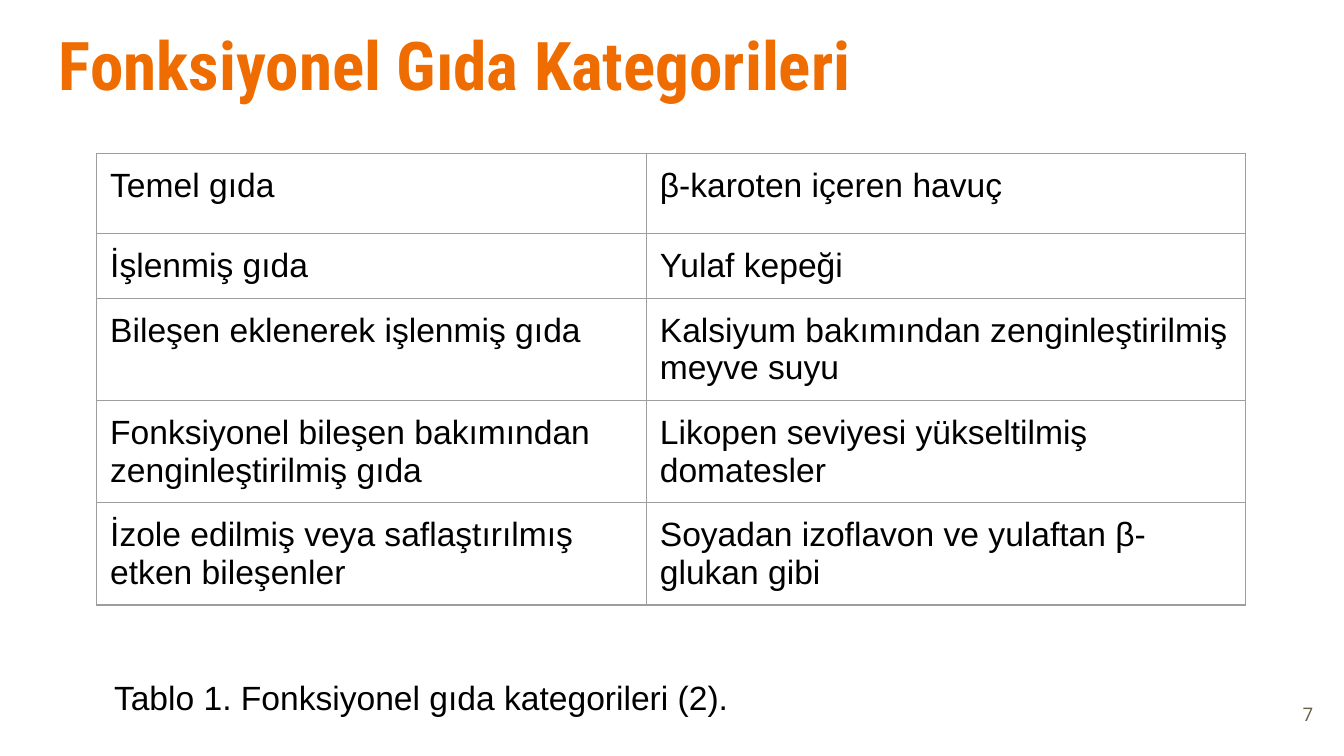
from dataclasses import dataclass

from lxml import etree
from pptx import Presentation
from pptx.dml.color import RGBColor
from pptx.enum.text import MSO_ANCHOR, PP_ALIGN
from pptx.oxml.ns import qn
from pptx.util import Inches, Pt

LEFT, RIGHT = PP_ALIGN.LEFT, PP_ALIGN.RIGHT
TOP, MIDDLE = MSO_ANCHOR.TOP, MSO_ANCHOR.MIDDLE
PAD = Inches(0.1)
EDGE = "9E9E9E"
WIDE = Inches(10)
HIGH = WIDE * 9 // 16


@dataclass
class Style:
    size: float
    font: str
    color: str
    bold: bool = False


@dataclass
class Label:
    text: str
    box: tuple
    style: Style
    align: int = LEFT
    anchor: int = TOP


BODY = Style(18, "Arial", "000000")
LABELS = [
    Label("Fonksiyonel Gıda Kategorileri", (0.34, 0.07, 9.32, 0.77),
          Style(36, "Roboto Condensed", "EF6C00", True)),
    Label("7", (9.27, 5.1, 0.6, 0.43), Style(10, "Open Sans", "695D46"),
          RIGHT, MIDDLE),
    Label("Tablo 1. Fonksiyonel gıda kategorileri (2).",
          (0.75, 4.94, 8.51, 0.33), BODY),
]
FOODS = [
    ("Temel gıda", "β-karoten içeren havuç"),
    ("İşlenmiş gıda", "Yulaf kepeği"),
    ("Bileşen eklenerek işlenmiş gıda",
     "Kalsiyum bakımından zenginleştirilmiş meyve suyu"),
    ("Fonksiyonel bileşen bakımından zenginleştirilmiş gıda",
     "Likopen seviyesi yükseltilmiş domatesler"),
    ("İzole edilmiş veya saflaştırılmış etken bileşenler",
     "Soyadan izoflavon ve yulaftan β-glukan gibi"),
]
WIDTHS = [4.09, 4.46]
HEIGHTS = [0.6, 0.38, 0.6, 0.6, 0.6]


def paint(color: str) -> RGBColor:
    return RGBColor.from_string(color)


def write(frame, text: str, style: Style, align: int = LEFT) -> None:
    para = frame.paragraphs[0]
    para.alignment = align
    run = para.add_run()
    run.text = text
    look = {"size": Pt(style.size), "name": style.font, "bold": style.bold}
    for key, value in look.items():
        setattr(run.font, key, value)
    run.font.color.rgb = paint(style.color)


def pad(item) -> None:
    for side in ("left", "right", "top", "bottom"):
        setattr(item, f"margin_{side}", PAD)


def add_label(slide, label: Label) -> None:
    frame = slide.shapes.add_textbox(*map(Inches, label.box)).text_frame
    frame.word_wrap = True
    frame.vertical_anchor = label.anchor
    pad(frame)
    write(frame, label.text, label.style, label.align)


def outline(cell, color: str, width: float) -> None:
    props = cell._tc.get_or_add_tcPr()
    for tag in ("a:lnL", "a:lnR", "a:lnT", "a:lnB"):
        line = etree.SubElement(props, qn(tag), w=str(Pt(width)))
        fill = etree.SubElement(line, qn("a:solidFill"))
        etree.SubElement(fill, qn("a:srgbClr"), val=color)


def add_grid(slide) -> None:
    box = map(Inches, (0.72, 1.14, sum(WIDTHS), sum(HEIGHTS)))
    table = slide.shapes.add_table(len(FOODS), len(WIDTHS), *box).table
    table.first_row = table.horz_banding = False
    for col, width in zip(table.columns, WIDTHS):
        col.width = Inches(width)
    for row, height, texts in zip(table.rows, HEIGHTS, FOODS):
        row.height = Inches(height)
        for cell, text in zip(row.cells, texts):
            pad(cell)
            outline(cell, EDGE, 0.75)
            cell.fill.background()
            write(cell.text_frame, text, BODY)


def main() -> None:
    deck = Presentation()
    deck.slide_width, deck.slide_height = WIDE, HIGH
    slide = deck.slides.add_slide(deck.slide_layouts[6])
    add_grid(slide)
    for label in LABELS:
        add_label(slide, label)
    deck.save("out.pptx")


if __name__ == "__main__":
    main()
